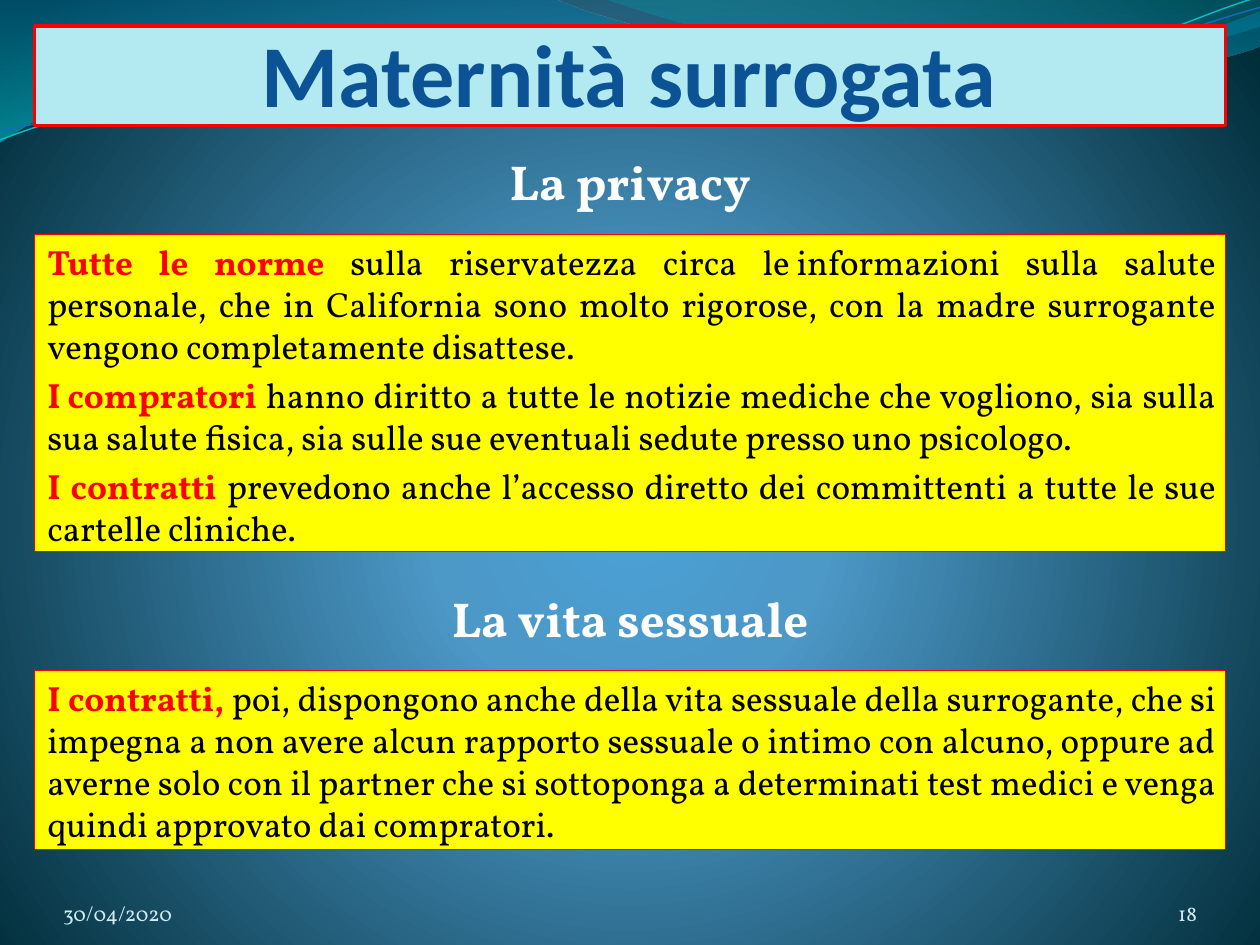
from math import cos, radians, sin
from lxml.etree import SubElement, fromstring
from pptx import Presentation
from pptx.dml.color import RGBColor
from pptx.enum.shapes import MSO_SHAPE as Shape
from pptx.enum.text import MSO_ANCHOR as Anchor, PP_ALIGN as Align
from pptx.oxml.ns import qn
from pptx.util import Pt

# Content: paragraphs as (highlighted opening, remaining text); ~ is a no-break space
TITLE = "Maternità surrogata"
SECTIONS = [
    {"heading": "La~privacy", "heading_top": 82.8, "top": 133.9, "height": 181.4,
     "paragraphs": [
         ("Tutte le norme ", "sulla riservatezza circa le~informazioni sulla salute personale, "
          "che in California sono molto rigorose, con la madre surrogante vengono "
          "completamente disattese. "),
         ("I~compratori ", "hanno diritto a tutte le notizie mediche che vogliono, sia sulla "
          "sua salute fisica, sia sulle sue eventuali sedute presso uno psicologo. "),
         ("I contratti ", "prevedono anche l’accesso diretto dei committenti a tutte le sue "
          "cartelle cliniche."),
     ]},
    {"heading": "La~vita sessuale", "heading_top": 332.6, "top": 383.2, "height": 102.2,
     "paragraphs": [
         ("I contratti, ", "poi, dispongono anche della vita sessuale della surrogante, "
          "che~si impegna a non~avere alcun rapporto sessuale o intimo con alcuno,~oppure ad "
          "averne solo con il~partner~che si sottoponga a determinati test medici e venga "
          "quindi~approvato dai compratori."),
     ]},
]
FOOTER = [("30/04/2020", 36, 168, Align.LEFT), ("18", 624, 60, Align.RIGHT)]

COLORS = {"title": "0B5394", "title_fill": "B3EAF2", "border": "FF0000", "box": "FFFF00",
          "accent": "FF0000", "body": "000000", "heading": "FFFFFF", "footer": "D1EAEE"}
LEFT, WIDTH = 19.8, 680.4
BOX_INSETS = (0, 3.6, 1.44, 3.6)

# Background gradient stops: (position, colour, opacity), all in percent
BACKGROUND = [(0, "4AA0D6", 100), (25, "4C98C7", 100), (100, "002C38", 100)]
CENTRE = ('<a:path path="circle"><a:fillToRect l="10000" t="110000" r="10000" b="100000"/>'
          '</a:path>')
DOWNWARD = '<a:lin ang="5400000" scaled="1"/>'

# Waves: points in inches; two numbers are a straight step, six a Bézier curve
UNIT = 7200  # drawing units to the inch, 0.01 pt each
TILT, PIVOT = -2.7, (5, 0.58)
WAVES = [
    {"steps": [(0, 0), (4.4, -0.01), (4.76, 0.17, 6.64, 0.63, 7.58, 0.63),
               (8.53, 0.63, 9.58, 0.26, 10, 0.09), (10.01, 0.36),
               (9.83, 0.44, 8.7, 0.76, 7.46, 0.75), (6.22, 0.75, 3.82, 0.28, 2.57, 0.34),
               (1.29, 0.36, 0.46, 0.83, -0.01, 1.13), (0, 0)],
     "stops": [(0, "0074A1", 45), (100, "00C6CF", 55)]},
    {"steps": [(4.79, -0.01), (5.09, 0.11, 6.82, 0.62, 7.69, 0.65),
               (8.56, 0.69, 9.61, 0.32, 10, 0.21), (10, 0), (4.79, -0.01)],
     "stops": [(0, "00A1A9", 30), (80, "008BBF", 45)]},
    {"steps": [(0, 1.11), (0.48, 0.93, 1.58, 0.57, 2.77, 0.52),
               (3.95, 0.47, 5.93, 0.89, 7.13, 0.8), (8.33, 0.71, 9.38, 0.15, 9.98, -0.02)],
     "line": ("0AB8BF", 0.85)},
    {"steps": [(0, 1.04), (0.47, 0.96, 1.64, 0.61, 2.83, 0.56),
               (4.03, 0.51, 5.97, 0.84, 7.17, 0.75), (8.36, 0.67, 9.41, 0.21, 10, 0.06)],
     "line": ("0F6FC6", 0.75)},
]


def set_gradient(properties, fill, stops, direction):
    """Put a gradient with opacities in place of the current solid fill."""
    fill.solid()
    marks = "".join(
        f'<a:gs pos="{pos * 1000}"><a:srgbClr val="{color}">'
        f'<a:alpha val="{opacity * 1000}"/></a:srgbClr></a:gs>'
        for pos, color, opacity in stops)
    gradient = fromstring(
        '<a:gradFill xmlns:a="http://schemas.openxmlformats.org/drawingml/2006/main" '
        f'rotWithShape="1"><a:gsLst>{marks}</a:gsLst>{direction}</a:gradFill>')
    properties.replace(properties.find("{*}solidFill"), gradient)


def place(step, tilt):
    """Split a step into points in drawing units, as they lie before the tilt."""
    angle, points = radians(-tilt), []
    for x, y in zip(step[::2], step[1::2]):
        dx, dy = x - PIVOT[0], y - PIVOT[1]
        points.append((round((PIVOT[0] + dx * cos(angle) - dy * sin(angle)) * UNIT),
                       round((PIVOT[1] + dx * sin(angle) + dy * cos(angle)) * UNIT)))
    return points


def add_wave(steps, stops=None, line=None):
    tilt = TILT if line else 0
    placed = [place(step, tilt) for step in steps]
    ends = [points[-1] for points in placed]
    builder = slide.shapes.build_freeform(*ends[0], scale=Pt(0.01))
    builder.add_line_segments(ends[1:], close=line is None)
    wave = builder.convert_to_shape()
    left, top = (min(values) for values in zip(*ends))
    # Bend the segments that have control points
    segments = list(wave.element.iter(qn("a:lnTo")))
    for segment, points in zip(segments, placed[1:]):
        if len(points) == 3:
            segment.tag = qn("a:cubicBezTo")
            segment.remove(segment[0])
            for x, y in points:
                SubElement(segment, qn("a:pt"), x=str(x - left), y=str(y - top))
    wave.shadow.inherit = False
    wave.rotation = tilt
    if line:
        wave.fill.background()
        set_line(wave, *line)
    else:
        wave.line.fill.background()
        set_gradient(wave.element.spPr, wave.fill, stops, DOWNWARD)


def set_line(shape, color, width):
    shape.line.color.rgb = RGBColor.from_string(color)
    shape.line.width = Pt(width)


def add_panel(top, height, fill, border_width):
    panel = slide.shapes.add_shape(Shape.RECTANGLE, Pt(LEFT), Pt(top), Pt(WIDTH), Pt(height))
    panel.shadow.inherit = False
    panel.fill.solid()
    panel.fill.fore_color.rgb = RGBColor.from_string(COLORS[fill])
    set_line(panel, COLORS["border"], border_width)
    return panel


def add_label(left, top, width, height):
    return slide.shapes.add_textbox(Pt(left), Pt(top), Pt(width), Pt(height))


def write(shape, paragraphs, size, align, insets, anchor=Anchor.TOP, font="Vollkorn",
          space=0, indents=(0, 0)):
    """Fill a shape with paragraphs of (text, colour, bold) runs."""
    frame = shape.text_frame
    sides = ("margin_left", "margin_top", "margin_right", "margin_bottom")
    frame_format = {"word_wrap": True, "vertical_anchor": anchor,
                    **{side: Pt(inset) for side, inset in zip(sides, insets)}}
    for key, value in frame_format.items():
        setattr(frame, key, value)
    for i, runs in enumerate(paragraphs):
        paragraph = frame.add_paragraph() if i else frame.paragraphs[0]
        paragraph.alignment = align
        paragraph.space_before = Pt(space)
        for key, indent in zip(("marL", "marR"), indents):
            paragraph._p.get_or_add_pPr().set(key, str(Pt(indent)))
        for text, color, bold in runs:
            run = paragraph.add_run()
            run.text = text.replace("~", chr(160))
            for key, value in {"name": font, "size": Pt(size), "bold": bold}.items():
                setattr(run.font, key, value)
            run.font.color.rgb = RGBColor.from_string(COLORS[color])


deck = Presentation()
deck.slide_width, deck.slide_height = Pt(720), Pt(540)
slide = deck.slides.add_slide(deck.slide_layouts[6])

# Background and waves
backdrop = slide.background.fill
backdrop.solid()
set_gradient(slide.element.find(".//{*}bgPr"), backdrop, BACKGROUND, CENTRE)
for wave_data in WAVES:
    add_wave(**wave_data)

# Title
write(add_panel(14.8, 56.9, "title_fill", 2), [[(TITLE, "title", True)]], 50.4,
      Align.CENTER, (0, 0, 1.44, 0), Anchor.BOTTOM, "Calibri")

# Headings with their yellow boxes
for section in SECTIONS:
    write(add_label(LEFT, section["heading_top"], WIDTH, 41),
          [[(section["heading"], "heading", True)]], 28, Align.CENTER, (7.2, 3.6, 7.2, 3.6))
    write(add_panel(section["top"], section["height"], "box", 0.75),
          [[(opening, "accent", True), (rest, "body", False)]
           for opening, rest in section["paragraphs"]],
          20, Align.JUSTIFY, BOX_INSETS, space=4, indents=(7.2, 3.6))

# Date and slide number
for text, left, width, align in FOOTER:
    write(add_label(left, 500.4, width, 28.8), [[(text, "footer", False)]], 12, align,
          (0, 0, 0, 0), Anchor.BOTTOM)

deck.save("out.pptx")
